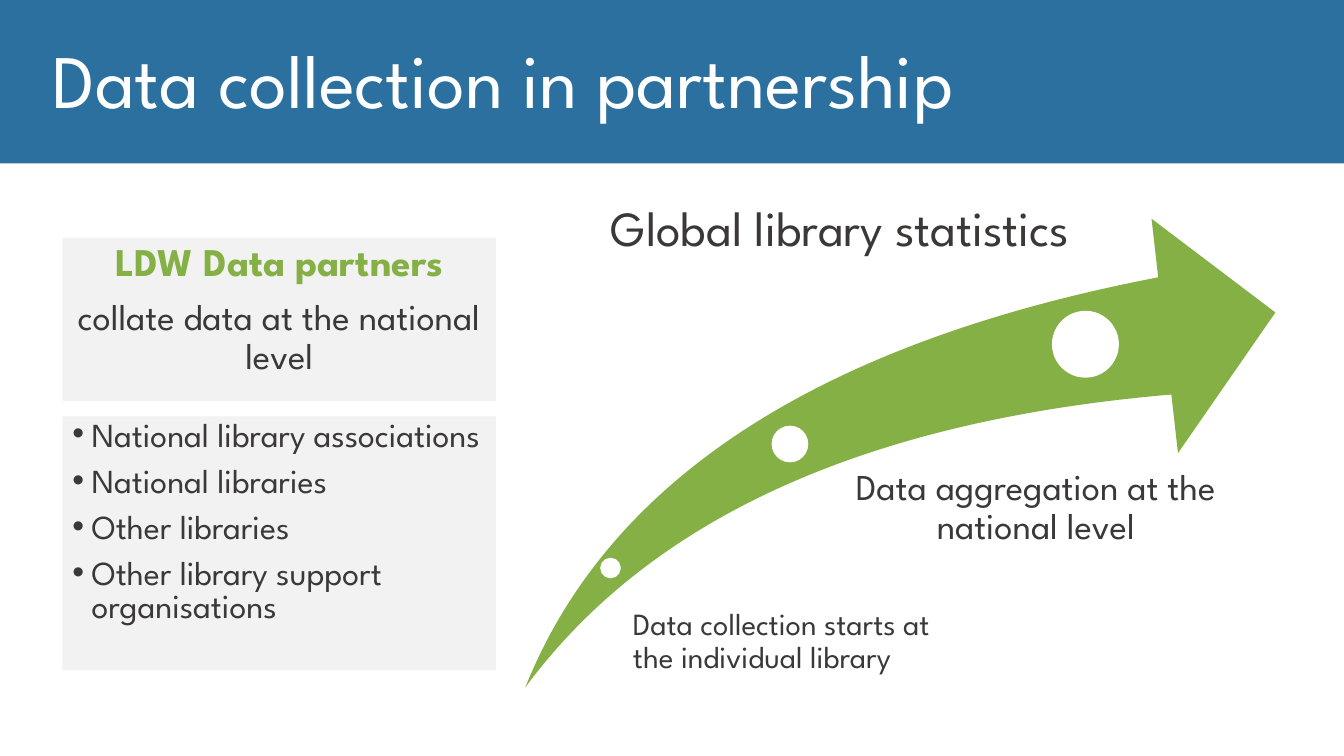
from dataclasses import dataclass

from lxml import etree
from pptx import Presentation
from pptx.dml.color import RGBColor
from pptx.enum import shapes, text
from pptx.oxml.ns import qn
from pptx.util import Inches, Pt

SHAPE = shapes.MSO_SHAPE
ALIGN = text.PP_ALIGN


@dataclass(frozen=True)
class Theme:
    font: str = "League Spartan"
    blue: str = "2B709E"
    green: str = "85B046"
    grey: str = "F2F2F2"
    white: str = "FFFFFF"
    ink: str = "3B3838"
    title: int = 54
    goal: int = 35
    heading: int = 28
    body: int = 26
    bullet: int = 24
    start: int = 22


class Deck:
    """Holds the theme and the slide being drawn."""

    def __init__(self, theme):
        self.theme = theme
        self.prs = Presentation()
        self.prs.slide_width, self.prs.slide_height = Inches(13.33), Inches(7.5)
        self.s = self.prs.slides.add_slide(self.prs.slide_layouts[6])

    def shape(self, kind, box, fill, outlined=False):
        sp = self.s.shapes.add_shape(kind, *map(Inches, box))
        sp.shadow.inherit = False
        sp.fill.solid()
        sp.fill.fore_color.rgb = RGBColor.from_string(fill)
        if outlined:
            sp.line.color.rgb = RGBColor.from_string(fill)
            sp.line.width = Pt(1)
        else:
            sp.line.fill.background()
        return sp

    def set_text(self, sp, lines, align=ALIGN.LEFT, spacing=0.9, before=0):
        """Fill a shape with (text, size, colour, bold) lines."""
        tf = sp.text_frame
        tf.word_wrap = True
        tf.vertical_anchor = text.MSO_ANCHOR.TOP
        tf.text = "\n".join(line[0] for line in lines)
        for p, (_, size, color, bold) in zip(tf.paragraphs, lines):
            p.alignment = align
            p.line_spacing = spacing
            p.space_before = Pt(before)
            font = p.runs[0].font
            font.name, font.size, font.bold = self.theme.font, Pt(size), bold
            font.color.rgb = RGBColor.from_string(color)
        return tf

    def title(self, box, words):
        sp = self.s.shapes.add_textbox(*map(Inches, box))
        line = (words, self.theme.title, self.theme.white, False)
        tf = self.set_text(sp, [line], spacing=1.0)
        tf.word_wrap = False
        tf.auto_size = text.MSO_AUTO_SIZE.SHAPE_TO_FIT_TEXT

    def label(self, box, words, size, inset, align=ALIGN.LEFT):
        sp = self.s.shapes.add_textbox(*map(Inches, box))
        tf = self.set_text(sp, [(words, size, self.theme.ink, False)], align)
        tf.margin_left = Inches(inset)
        tf.margin_top = tf.margin_right = tf.margin_bottom = 0

    def panel(self, box, lines, **style):
        sp = self.shape(SHAPE.RECTANGLE, box, self.theme.grey)
        return self.set_text(sp, lines, before=10, **style)

    def bullets(self, box, items):
        t = self.theme
        lines = [(item, t.bullet, t.ink, False) for item in items]
        tf = self.panel(box, lines, spacing=0.8)
        indent = Inches(0.19)
        for p in tf.paragraphs:
            pPr = p._p.get_or_add_pPr()
            pPr.set("marL", str(indent))
            pPr.set("indent", str(-indent))
            etree.SubElement(pPr, qn("a:buFont")).set("typeface", "Arial")
            etree.SubElement(pPr, qn("a:buChar")).set("char", "•")

    def swoosh(self, box):
        sp = self.shape(SHAPE.SWOOSH_ARROW, box, self.theme.green)
        sp.adjustments[0] = sp.adjustments[1] = 0.25

    def dot(self, left, top, size):
        self.shape(SHAPE.OVAL, (left, top, size, size), self.theme.white, outlined=True)


def main():
    t = Theme()
    d = Deck(t)

    d.shape(SHAPE.RECTANGLE, (0, 0, 13.33, 1.62), t.blue)
    d.title((0.42, 0.28, 11.05, 1.01), "Data collection in partnership")

    d.swoosh((5.21, 2.17, 7.44, 4.65))
    for left, top, size in [(5.96, 5.54, 0.19), (7.66, 4.23, 0.35), (10.44, 3.09, 0.65)]:
        d.dot(left, top, size)
    d.label((6.18, 6.04, 3.46, 0.64),
            "Data collection starts at the individual library", t.start, 0.1)
    d.label((8.2, 4.65, 3.96, 0.82),
            "Data aggregation at the national level", t.body, 0.19, ALIGN.CENTER)
    d.label((5.8, 2.03, 5.55, 0.95), "Global library statistics", t.goal, 0.26)

    d.panel((0.62, 2.36, 4.3, 1.62), [
        ("LDW Data partners", t.heading, t.green, True),
        ("collate data at the national level", t.body, t.ink, False),
    ], align=ALIGN.CENTER)
    d.bullets((0.62, 4.13, 4.3, 2.52), [
        "National library associations",
        "National libraries",
        "Other libraries",
        "Other library support organisations",
    ])

    d.prs.save("out.pptx")


if __name__ == "__main__":
    main()
